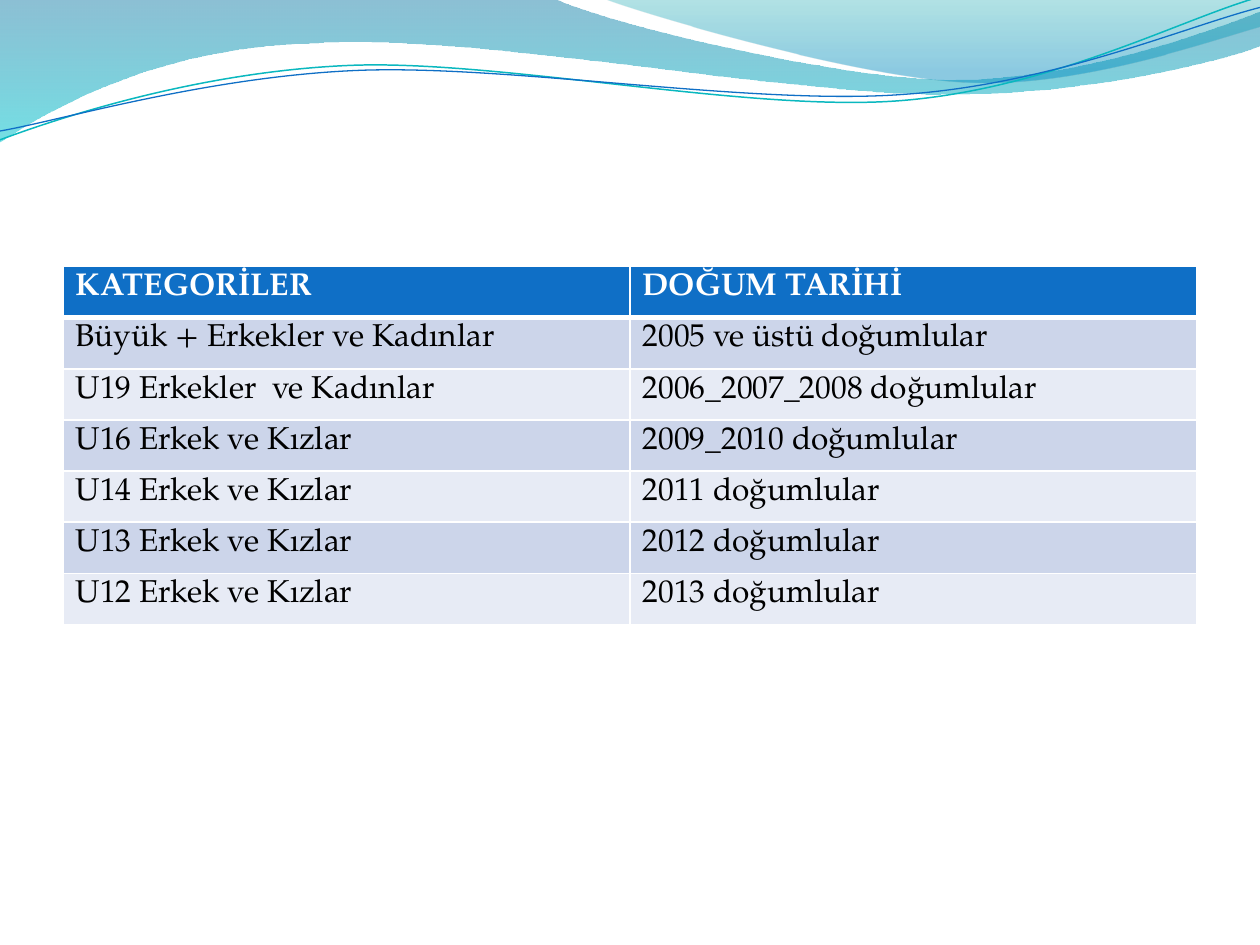
import math

import pptx
import pptx.dml.color
import pptx.oxml
import pptx.oxml.ns
import pptx.util
from lxml import etree

Pt = pptx.util.Pt
qn = pptx.oxml.ns.qn
FONT = "TeX Gyre Pagella"
BLUE, WHITE, BLACK = "0F6FC6", "FFFFFF", "000000"
BANDS = ("CCD5EA", "E7EBF5")
LINE_TILT = -2.7

ROWS = [
    ("KATEGORİLER", "DOĞUM TARİHİ"),
    ("Büyük + Erkekler ve Kadınlar", "2005 ve üstü doğumlular"),
    ("U19 Erkekler  ve Kadınlar", "2006_2007_2008 doğumlular"),
    ("U16 Erkek ve Kızlar", "2009_2010 doğumlular"),
    ("U14 Erkek ve Kızlar", "2011 doğumlular"),
    ("U13 Erkek ve Kızlar", "2012 doğumlular"),
    ("U12 Erkek ve Kızlar", "2013 doğumlular"),
]

# Outlines in points: a pair is a corner, six numbers are a Bézier curve.
WIDE_WAVE = [
    (0, 0), (316.8, -0.7),
    (342.7, 12.2, 478.1, 45.4, 545.8, 45.4),
    (614.2, 45.4, 689.8, 18.7, 720, 6.5), (720.7, 25.9),
    (707.8, 31.7, 626.4, 54.7, 537.1, 54),
    (447.8, 54, 275, 20.2, 185, 24.5),
    (92.9, 25.9, 33.1, 59.8, -0.7, 81.4),
]
RIGHT_WAVE = [
    (344.9, -0.7),
    (366.5, 7.9, 491, 44.6, 553.7, 46.8),
    (616.3, 49.7, 691.9, 23, 720, 15.1), (720, 0),
]
TEAL_LINE = [
    (0, 79.9),
    (34.6, 67, 113.8, 41, 199.4, 37.4),
    (284.4, 33.8, 427, 64.1, 513.4, 57.6),
    (599.8, 51.1, 675.4, 10.8, 718.6, -1.4),
]
BLUE_LINE = [
    (0, 74.9),
    (33.8, 69.1, 118.1, 43.9, 203.8, 40.3),
    (290.2, 36.7, 429.8, 60.5, 516.2, 54),
    (601.9, 48.2, 677.5, 15.1, 720, 4.3),
]


def rgb(color):
    return pptx.dml.color.RGBColor.from_string(color)


def turn(x, y, degrees):
    a = math.radians(degrees)
    return x * math.cos(a) - y * math.sin(a), x * math.sin(a) + y * math.cos(a)


def curve_segments(sp, outline):
    """Join each three straight segments that hold a curve into one Bézier."""
    lines = iter(sp._element.findall(".//" + qn("a:lnTo")))
    for step in outline[1:]:
        first = next(lines)
        if len(step) == 6:
            curve = etree.Element(qn("a:cubicBezTo"))
            first.addprevious(curve)
            for line in (first, next(lines), next(lines)):
                curve.append(line[0])
                line.getparent().remove(line)


def add_outline(s, outline, close, tilt=0):
    """Add an outline whose frame is tilted while its points stay in place."""
    points = [turn(*step[i:i + 2], -tilt)
              for step in outline for i in range(0, len(step), 2)]
    points = [(Pt(x), Pt(y)) for x, y in points]
    builder = s.shapes.build_freeform(*points[0], scale=1.0)
    builder.add_line_segments(points[1:], close=close)
    sp = builder.convert_to_shape()
    curve_segments(sp, outline)
    cx, cy = turn(sp.left + sp.width / 2, sp.top + sp.height / 2, tilt)
    sp.left, sp.top = round(cx - sp.width / 2), round(cy - sp.height / 2)
    sp.rotation = tilt
    sp.shadow.inherit = False
    return sp


def add_wave(s, outline, stops):
    """Add a filled wave; stops are (position %, colour, opacity %), top to bottom."""
    sp = add_outline(s, outline, True)
    sp.line.fill.background()
    sp.fill.gradient()
    grad = sp._element.spPr.find(qn("a:gradFill"))
    stop_xml = "".join(
        f'<a:gs pos="{pos * 1000}"><a:srgbClr val="{color}">'
        f'<a:alpha val="{opacity * 1000}"/></a:srgbClr></a:gs>'
        for pos, color, opacity in stops)
    new_grad = pptx.oxml.parse_xml(
        f'<a:gradFill {pptx.oxml.ns.nsdecls("a")} rotWithShape="1">'
        f'<a:gsLst>{stop_xml}</a:gsLst><a:lin ang="5400000" scaled="0"/></a:gradFill>')
    grad.getparent().replace(grad, new_grad)


def add_wave_line(s, outline, color, width):
    sp = add_outline(s, outline, False, LINE_TILT)
    sp.fill.background()
    sp.line.color.rgb = rgb(color)
    sp.line.width = Pt(width)


def set_borders(cell, widths):
    """Give the cell white borders; widths are left, right, top, bottom."""
    tc_pr = cell._tc.get_or_add_tcPr()
    for i, (side, width) in enumerate(zip("LRTB", widths)):
        ln = etree.Element(qn(f"a:ln{side}"), w=str(Pt(width)))
        fill = etree.SubElement(ln, qn("a:solidFill"))
        etree.SubElement(fill, qn("a:srgbClr"), val=WHITE)
        tc_pr.insert(i, ln)


def fill_cell(cell, text, row):
    header = row == 0
    cell.fill.solid()
    cell.fill.fore_color.rgb = rgb(BLUE if header else BANDS[(row - 1) % 2])
    set_borders(cell, (1, 1, 3 if row == 1 else 1, 3 if header else 1))
    r = cell.text_frame.paragraphs[0].add_run()
    r.text = text
    r.font.name = FONT
    r.font.size = Pt(18)
    r.font.bold = header
    r.font.color.rgb = rgb(WHITE if header else BLACK)


def add_category_table(s):
    row_height = 29.2
    table = s.shapes.add_table(len(ROWS), 2, Pt(36), Pt(152.4),
                               Pt(648), Pt(row_height * len(ROWS))).table
    for row, texts in enumerate(ROWS):
        table.rows[row].height = Pt(row_height)
        for col, text in enumerate(texts):
            fill_cell(table.cell(row, col), text, row)


def main():
    prs = pptx.Presentation()
    prs.slide_width, prs.slide_height = Pt(720), Pt(540)
    s = prs.slides.add_slide(prs.slide_layouts[6])
    add_wave(s, WIDE_WAVE, [(0, "0074A1", 45), (100, "00C6CF", 55)])
    add_wave(s, RIGHT_WAVE, [(0, "00A1A9", 30), (80, "008BBF", 45)])
    add_wave_line(s, TEAL_LINE, "0AB8BF", 0.85)
    add_wave_line(s, BLUE_LINE, BLUE, 0.75)
    add_category_table(s)
    prs.save("out.pptx")


if __name__ == "__main__":
    main()
